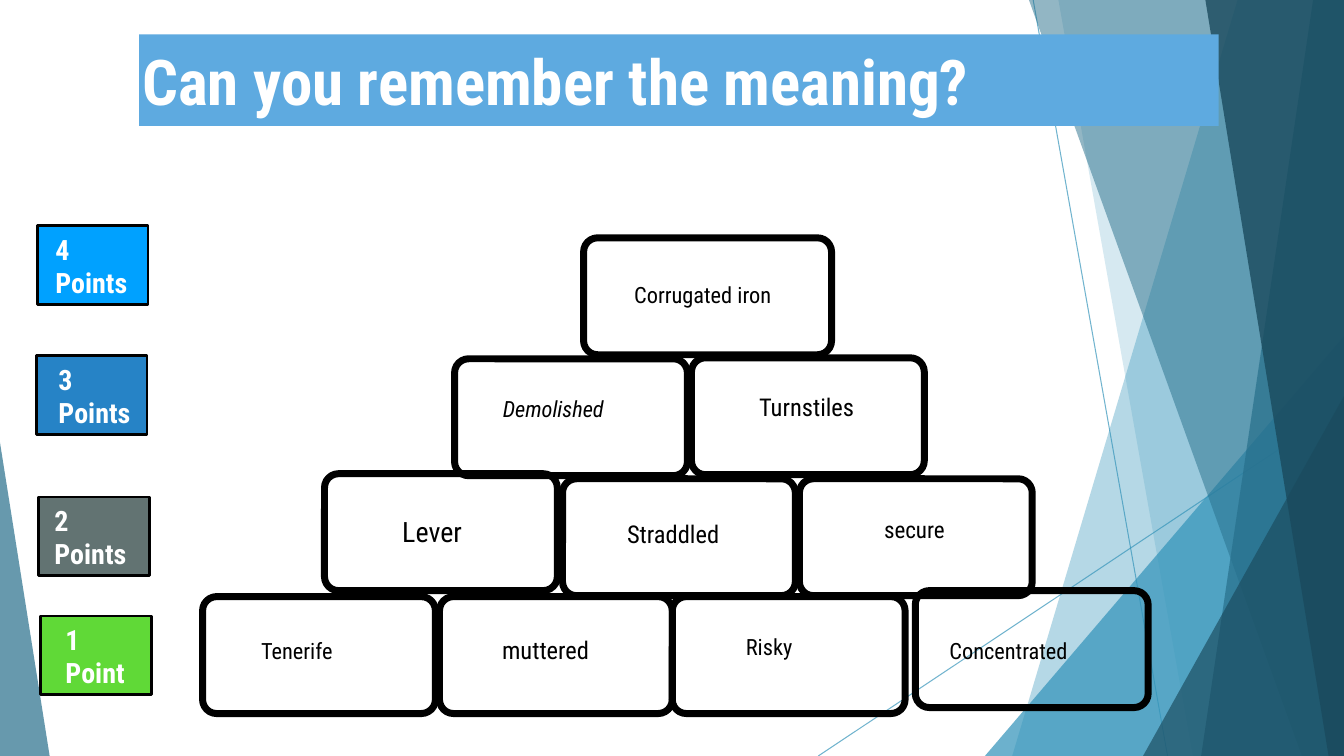
"""Build a word pyramid slide with point badges and a faceted backdrop."""
from lxml import etree
from pptx import Presentation
from pptx.dml.color import RGBColor
from pptx.enum.shapes import MSO_CONNECTOR, MSO_SHAPE
from pptx.enum.text import MSO_ANCHOR, PP_ALIGN
from pptx.oxml.ns import qn
from pptx.util import Pt

RECT, ROUND = MSO_SHAPE.RECTANGLE, MSO_SHAPE.ROUNDED_RECTANGLE
TRI, LINE = MSO_SHAPE.ISOSCELES_TRIANGLE, MSO_CONNECTOR.STRAIGHT
MIDDLE, LEFT, CENTER = MSO_ANCHOR.MIDDLE, PP_ALIGN.LEFT, PP_ALIGN.CENTER

FONT = "Roboto Condensed"
WIDE, HIGH = 960, 540
COLORS = {
    "teal": "3494BA", "deep": "276F8B", "night": "1A4A5D", "black": "000000",
    "white": "FFFFFF", "sky": "5EAAE0", "green": "60D937", "gray": "627372",
    "blue": "2683C6", "bright": "00A1FF",
}

TITLE = "Can you remember the meaning?"
RAYS = [(738, 0, 834, 540), (960, 290, 584.5, 540)]
# kind, geometry, color, opacity
FACETS = [
    ("band", (884, 723), "teal", 36),
    ("band", (756, 852), "teal", 20),
    ("tri", (703.5, 240, 256.5, 300, 1), "teal", 72),
    ("band", (735, 929.5), "deep", 50),
    ("band", (938, 858), "deep", 70),
    ("band", (861, 949), "night", 80),
    ("tri", (816.5, 283, 143.5, 257, 1), "night", 66),
    ("tri", (0, 316, 35.5, 224, 0), "deep", 70),
]
BRICKS = [
    (144.7, 426.2, 166.3), (313.9, 426.2, 166.3), (653.8, 421.9, 166.3),
    (480.2, 426.2, 166.3), (231.8, 338.4, 166.3), (571, 342, 166.3),
    (401.8, 342, 166.3), (416.9, 169.9, 177.1), (324.7, 256.3, 166.3),
    (493.9, 255.6, 166.3),
]
WORDS = [
    ("Tenerife", 184.3, 465, 134, 16), ("muttered", 356.4, 464, 74, 17.5),
    ("Lever", 285.1, 379.8, 60, 20), ("secure", 629.3, 378.4, 54, 16.5),
    ("Corrugated iron", 412, 210.6, 180, 16),
    ("Demolished", 357, 292, 134, 16), ("Straddled", 445.7, 381.2, 85, 17.5),
    ("Turnstiles", 540, 290.5, 85, 17.5),
    ("Concentrated", 676, 465, 111, 16), ("Risky", 530.6, 462, 134, 16),
]
BADGES = [
    ("1\nPoint", 28.8, 440, 44.6, "green"),
    ("2\nPoints", 27.4, 355, 36.7, "gray"),
    ("3\nPoints", 25.9, 254.2, 39.6, "blue"),
    ("4\nPoints", 26.6, 161.3, 37.4, "bright"),
]


def tint(fill, name, alpha=100):
    fill.solid()
    fill.fore_color.rgb = RGBColor.from_string(COLORS[name])
    if alpha < 100:
        for node in fill._xPr.iter(qn("a:srgbClr")):
            etree.SubElement(node, qn("a:alpha"), val=str(alpha * 1000))


def draw(kind, box, color=None, alpha=100, edge=0):
    shape = slide.shapes.add_shape(kind, *map(Pt, box))
    dress(shape, color, alpha, edge)
    return shape


def dress(shape, color, alpha, edge):
    shape.shadow.inherit = False
    if color:
        tint(shape.fill, color, alpha)
    else:
        shape.fill.background()
    if edge:
        shape.line.width = Pt(edge)
        tint(shape.line.fill, "black")
    else:
        shape.line.fill.background()


def write(shape, text, size, color, bold=False, italic=False, align=LEFT):
    frame = shape.text_frame
    frame.word_wrap = True
    frame.vertical_anchor = MIDDLE
    frame.margin_left = frame.margin_right = Pt(2.2)
    frame.margin_top = frame.margin_bottom = Pt(2.2)
    frame.text = text
    for para in frame.paragraphs:
        para.alignment = align
        for run in para.runs:
            font = run.font
            font.name, font.size = FONT, Pt(size)
            font.bold, font.italic = bold, italic
            font.color.rgb = RGBColor.from_string(COLORS[color])


def label(box, *args, **style):
    write(slide.shapes.add_textbox(*map(Pt, box)), *args, **style)


deck = Presentation()
deck.slide_width, deck.slide_height = Pt(WIDE), Pt(HIGH)
slide = deck.slides.add_slide(deck.slide_layouts[6])

for ends in RAYS:
    ray = slide.shapes.add_connector(LINE, *map(Pt, ends))
    ray.line.width = Pt(0.75)
    tint(ray.line.fill, "teal", 70)
    etree.SubElement(ray._element.spPr, qn("a:effectLst"))

for kind, geom, color, alpha in FACETS:
    if kind == "tri":
        draw(TRI, geom[:4], color, alpha).adjustments[0] = geom[4]
    else:
        top, base = geom
        path = slide.shapes.build_freeform(top, 0, scale=Pt(1))
        path.add_line_segments([(WIDE, 0), (WIDE, HIGH), (base, HIGH)])
        dress(path.convert_to_shape(), color, alpha, 0)

for left, top, width in BRICKS:
    draw(ROUND, (left, top, width, 83.5), edge=5).adjustments[0] = 0.12

for text, left, top, inset, color in BADGES:
    draw(RECT, (left, top, 79.2, 56.2), color, edge=2)
    label((inset, top + 2.2, 66, 52.6), text, 20, "white", bold=True)

for text, left, mid, width, size in WORDS:
    label((left, mid - 12.5, width, 25), text, size, "black",
          italic=text == "Demolished",
          align=CENTER if text == "Corrugated iron" else LEFT)

banner = draw(RECT, (99.4, 24.5, 771.1, 65.5), "sky")
write(banner, TITLE, 45, "white", bold=True)

deck.save("out.pptx")
